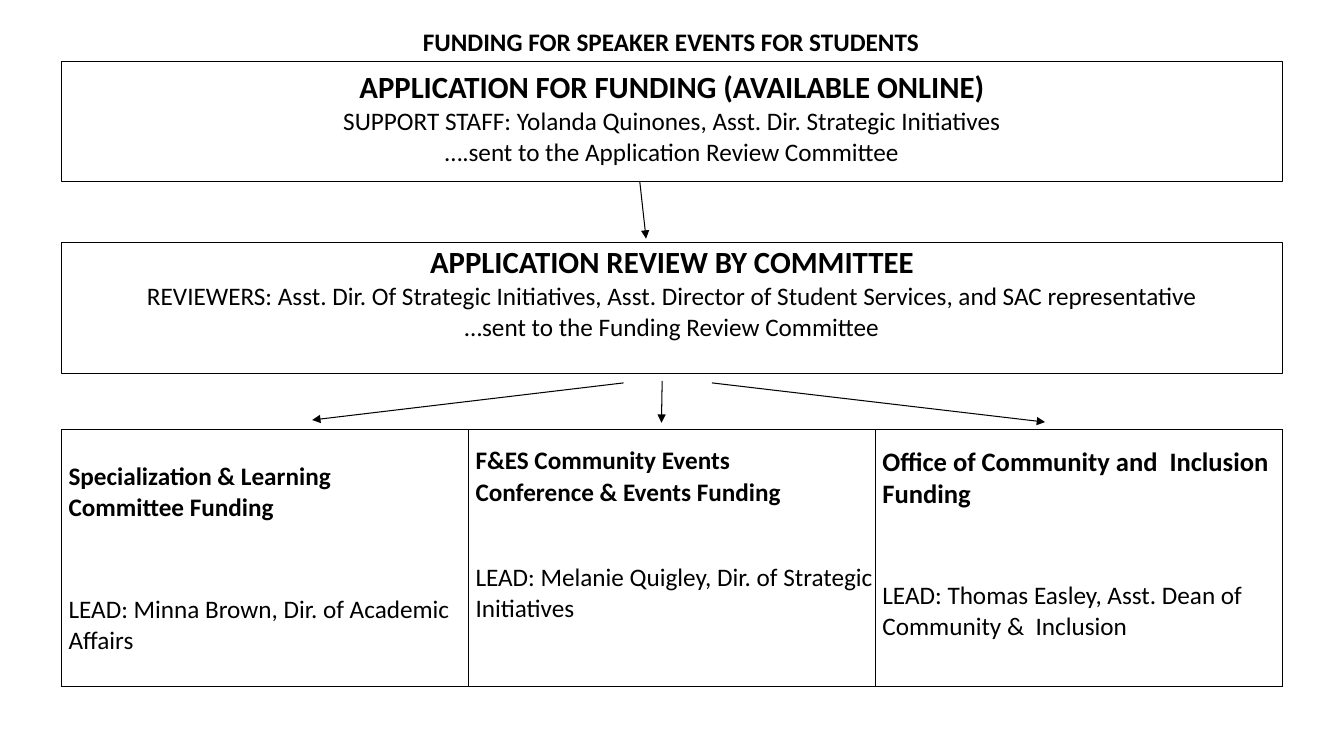
from dataclasses import dataclass

from lxml.etree import SubElement as Sub
from pptx import Presentation
from pptx.dml.color import RGBColor as Rgb
from pptx.enum.shapes import MSO_CONNECTOR as Link, MSO_SHAPE as Kind
from pptx.enum.text import MSO_ANCHOR as Anchor, PP_ALIGN as Align
from pptx.oxml.ns import qn
from pptx.util import Pt


@dataclass(frozen=True)
class Theme:
    font: str = "Calibri"
    ink: Rgb = Rgb(0, 0, 0)
    head: int = 22
    lead: int = 19
    body: int = 18
    line: float = 0.75


THEME = Theme()
LEFT, WIDE = 44, 872

STEPS = [
    (44, 85.5, 1.17, ["APPLICATION FOR FUNDING (AVAILABLE ONLINE)",
                      "SUPPORT STAFF: Yolanda Quinones, Asst. Dir. Strategic Initiatives",
                      "….sent to the Application Review Committee"]),
    (173.5, 93, 1, ["APPLICATION REVIEW BY COMMITTEE",
                    "REVIEWERS: Asst. Dir. Of Strategic Initiatives, "
                    "Asst. Director of Student Services, and SAC representative",
                    "…sent to the Funding Review Committee"]),
]

# Start and tip of each arrow
ARROWS = [
    ((457, 129.5), (461.5, 170.5)),
    ((445.5, 273.5), (223, 300)),
    ((473, 272), (472.5, 302)),
    ((508.5, 273.5), (746.5, 301.5)),
]

# Name, name size, lead, top inset, gap between the two
FUNDS = [
    ("Specialization & Learning\vCommittee Funding", THEME.body,
     "LEAD: Minna Brown, Dir. of Academic Affairs", 22, 51),
    ("F&ES Community Events\vConference & Events Funding", THEME.body,
     "LEAD: Melanie Quigley, Dir. of Strategic Initiatives", 11, 39),
    ("Office of Community and  Inclusion Funding", THEME.lead,
     "LEAD: Thomas Easley, Asst. Dean of Community &  Inclusion", 11, 50),
]


def write(par, text, size=THEME.body, bold=False, align=Align.LEFT,
          before=0, space=1.0):
    par.text = text
    par.alignment = align
    par.space_before = Pt(before)
    par.line_spacing = space
    for run in par.runs:
        font = run.font
        font.name, font.size, font.bold = THEME.font, Pt(size), bold
        font.color.rgb = THEME.ink


def inset(part, left=0, top=0):
    part.margin_left, part.margin_top = Pt(left), Pt(top)
    part.margin_right = part.margin_bottom = 0


def title(slide, left, top, wide, high):
    frame = slide.shapes.add_textbox(Pt(left), Pt(top), Pt(wide), Pt(high)).text_frame
    frame.word_wrap = True
    inset(frame, left=1, top=1)
    write(frame.paragraphs[0], "FUNDING FOR SPEAKER EVENTS FOR STUDENTS", bold=True)


def step(slide, left, top, wide, high, lines, space):
    box = slide.shapes.add_shape(Kind.RECTANGLE, Pt(left), Pt(top), Pt(wide), Pt(high))
    box.shadow.inherit = False
    box.fill.background()
    box.line.color.rgb = THEME.ink
    box.line.width = Pt(THEME.line)
    frame = box.text_frame
    frame.word_wrap = True
    frame.vertical_anchor = Anchor.TOP
    inset(frame)
    head, *rest = lines
    write(frame.paragraphs[0], head, THEME.head, True, Align.CENTER, space=space)
    for text in rest:
        write(frame.add_paragraph(), text, align=Align.CENTER, before=0.5)


def arrow(slide, start, tip):
    link = slide.shapes.add_connector(Link.STRAIGHT, *map(Pt, start + tip))
    link.line.color.rgb = THEME.ink
    link.line.width = Pt(THEME.line)
    Sub(link.line._get_or_add_ln(), qn("a:tailEnd"), type="triangle")
    Sub(link._element.spPr, qn("a:effectLst"))


def border(cell):
    props = cell._tc.get_or_add_tcPr()
    for side in ("lnL", "lnR", "lnT", "lnB"):
        edge = Sub(props, qn(f"a:{side}"), w=str(Pt(THEME.line)))
        Sub(Sub(edge, qn("a:solidFill")), qn("a:srgbClr"), val=str(THEME.ink))


def funds(slide, left, top, wide, high):
    table = slide.shapes.add_table(1, len(FUNDS), Pt(left), Pt(top),
                                   Pt(wide), Pt(high)).table
    table.first_row = table.horz_banding = False
    for cell, (name, size, lead, drop, gap) in zip(table.rows[0].cells, FUNDS):
        border(cell)
        cell.fill.background()
        cell.vertical_anchor = Anchor.TOP
        inset(cell, left=5, top=drop)
        frame = cell.text_frame
        write(frame.paragraphs[0], name, size, True, space=1.02)
        write(frame.add_paragraph(), lead, before=gap)


def main():
    deck = Presentation()
    deck.slide_width, deck.slide_height = Pt(960), Pt(540)
    slide = deck.slides.add_slide(deck.slide_layouts[6])
    funds(slide, LEFT, 307, WIDE, 183.5)
    title(slide, 301, 18, 516, 14)
    for top, high, space, lines in STEPS:
        step(slide, LEFT, top, WIDE, high, lines, space)
    for start, tip in ARROWS:
        arrow(slide, start, tip)
    deck.save("out.pptx")


if __name__ == "__main__":
    main()
